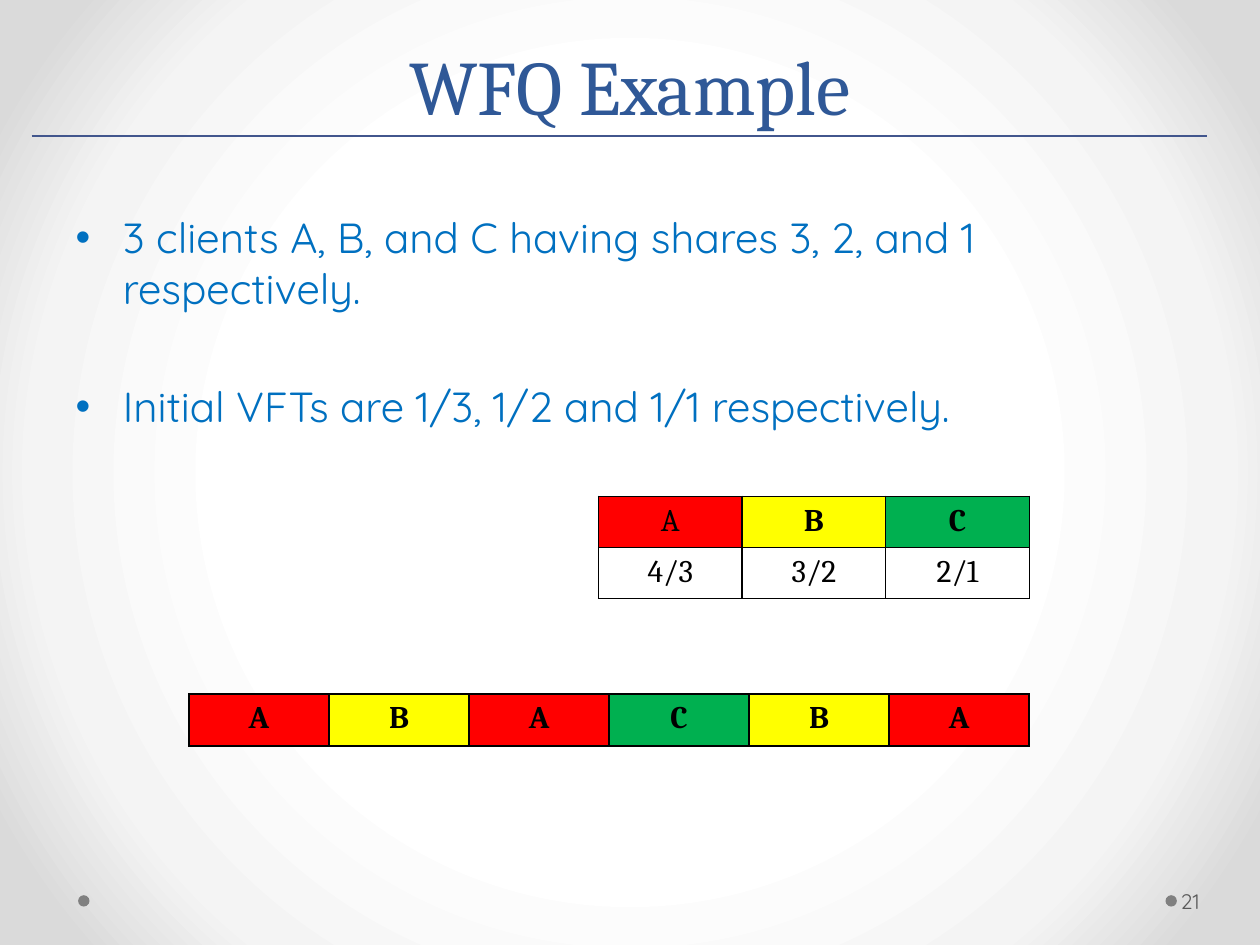
from dataclasses import dataclass

from lxml.etree import SubElement
from pptx import Presentation
from pptx.dml.color import RGBColor
from pptx.enum.shapes import MSO_CONNECTOR, MSO_SHAPE
from pptx.enum.text import MSO_ANCHOR as ANCHOR, PP_ALIGN as ALIGN
from pptx.oxml import parse_xml
from pptx.oxml.ns import nsdecls, qn
from pptx.util import Inches, Pt


@dataclass(frozen=True)
class Theme:
    heading_font: str = "Cambria"
    body_font: str = "Quicksand"
    title_size: int = 44
    body_size: int = 24
    cell_size: int = 18
    number_size: int = 12
    title: str = "2F5897"
    rule: str = "42568D"
    body: str = "0070C0"
    number: str = "595959"
    dot: str = "808080"
    ink: str = "000000"
    plain: str = "FFFFFF"
    backdrop: tuple = ((50, "FFFFFF"), (76, "F4F4F4"), (92, "DADADA"))


THEME = Theme()
CLIENT_FILLS = {"A": "FF0000", "B": "FFFF00", "C": "00B050"}


def rgb(value):
    return RGBColor.from_string(value)


def write(p, text, font=THEME.heading_font, size=THEME.cell_size,
          color=THEME.ink, bold=False, align=None):
    r = p.add_run()
    r.text = text
    r.font.name = font
    r.font.size = Pt(size)
    r.font.color.rgb = rgb(color)
    r.font.bold = bold
    p.alignment = align


def place(sp, left, top, width, height):
    sp.left, sp.top = Inches(left), Inches(top)
    sp.width, sp.height = Inches(width), Inches(height)


def set_backdrop(slide):
    """Fill the background with a radial gradient."""
    stops = "".join(
        f'<a:gs pos="{pos * 1000}"><a:srgbClr val="{color}"/></a:gs>'
        for pos, color in THEME.backdrop)
    radial = parse_xml(
        f'<a:gradFill {nsdecls("a")} rotWithShape="1"><a:gsLst>{stops}</a:gsLst>'
        '<a:path path="circle"><a:fillToRect l="50000" t="50000" r="50000" '
        'b="50000"/></a:path></a:gradFill>')
    slide.background.fill.gradient()
    linear = next(slide.background._cSld.iter(qn("a:gradFill")))
    linear.getparent().replace(linear, radial)


def add_title(slide, text, left, top, width, height):
    sp = slide.shapes.title
    place(sp, left, top, width, height)
    tf = sp.text_frame
    tf.vertical_anchor = ANCHOR.BOTTOM
    p = tf.paragraphs[0]
    p.line_spacing = Pt(58)
    write(p, text, size=THEME.title_size, color=THEME.title, align=ALIGN.CENTER)


def add_rule(slide, left, top, width):
    line = slide.shapes.add_connector(
        MSO_CONNECTOR.STRAIGHT, Inches(left), Inches(top),
        Inches(left + width), Inches(top))
    line.line.color.rgb = rgb(THEME.rule)
    line.line.width = Pt(0.75)
    SubElement(line._element.spPr, qn("a:effectLst"))


def add_bullets(slide, items, left, top, width, height):
    sp = slide.placeholders[1]
    place(sp, left, top, width, height)
    tf = sp.text_frame
    for i, item in enumerate(items):
        p = tf.add_paragraph() if i else tf.paragraphs[0]
        if i:
            p.space_before = Pt(39)
        write(p, item, font=THEME.body_font, size=THEME.body_size, color=THEME.body)


def add_borders(cell):
    tc_pr = cell._tc.get_or_add_tcPr()
    for side in ("lnL", "lnR", "lnT", "lnB"):
        ln = SubElement(tc_pr, qn(f"a:{side}"), w=str(Pt(1)))
        SubElement(SubElement(ln, qn("a:solidFill")), qn("a:srgbClr"), val=THEME.ink)


def add_client_table(slide, rows, left, top, width, height, plain=()):
    """Colour cells by client; client names are bold unless (row, column) is in plain."""
    table = slide.shapes.add_table(
        len(rows), len(rows[0]), Inches(left), Inches(top),
        Inches(width), Inches(height)).table
    table.first_row = table.horz_banding = False
    for i, row in enumerate(rows):
        for j, text in enumerate(row):
            cell = table.cell(i, j)
            add_borders(cell)
            cell.fill.solid()
            cell.fill.fore_color.rgb = rgb(CLIENT_FILLS.get(text, THEME.plain))
            bold = text in CLIENT_FILLS and (i, j) not in plain
            write(cell.text_frame.paragraphs[0], text, bold=bold, align=ALIGN.CENTER)


def add_footer(slide, number, left, top, width, height):
    """Two dots, and the slide number after the right one."""
    dot = 0.09
    number_width = 0.61
    number_left = left + width - number_width
    for x in (left, number_left - dot):
        sp = slide.shapes.add_shape(
            MSO_SHAPE.OVAL, Inches(x), Inches(top + (height - dot) / 2),
            Inches(dot), Inches(dot))
        sp.shadow.inherit = False
        sp.fill.solid()
        sp.fill.fore_color.rgb = rgb(THEME.dot)
        sp.line.fill.background()
    tf = slide.shapes.add_textbox(
        Inches(number_left), Inches(top), Inches(number_width),
        Inches(height)).text_frame
    tf.word_wrap = True
    tf.vertical_anchor = ANCHOR.MIDDLE
    tf.margin_left = Inches(0.03)
    tf.margin_right = Inches(0.05)
    write(tf.paragraphs[0], number, font=THEME.body_font,
          size=THEME.number_size, color=THEME.number)


def main():
    prs = Presentation()
    prs.slide_width, prs.slide_height = Inches(10), Inches(7.5)
    slide = prs.slides.add_slide(prs.slide_layouts[1])
    set_backdrop(slide)
    add_footer(slide, "21", 0.62, 6.95, 9.33, 0.4)
    add_title(slide, "WFQ Example", 0.5, 0.17, 9, 0.92)
    add_rule(slide, 0.25, 1.08, 9.33)
    add_bullets(slide, [
        "3 clients A, B, and C having shares 3, 2, and 1 respectively.",
        "Initial VFTs are 1/3, 1/2 and 1/1 respectively.",
    ], 0.5, 1.63, 9, 5.37)
    add_client_table(slide, ["ABACBA"], 1.5, 5.51, 6.67, 0.41)
    add_client_table(slide, ["ABC", ("4/3", "3/2", "2/1")],
                     4.75, 3.94, 3.42, 0.81, plain={(0, 0)})
    prs.save("out.pptx")


if __name__ == "__main__":
    main()
